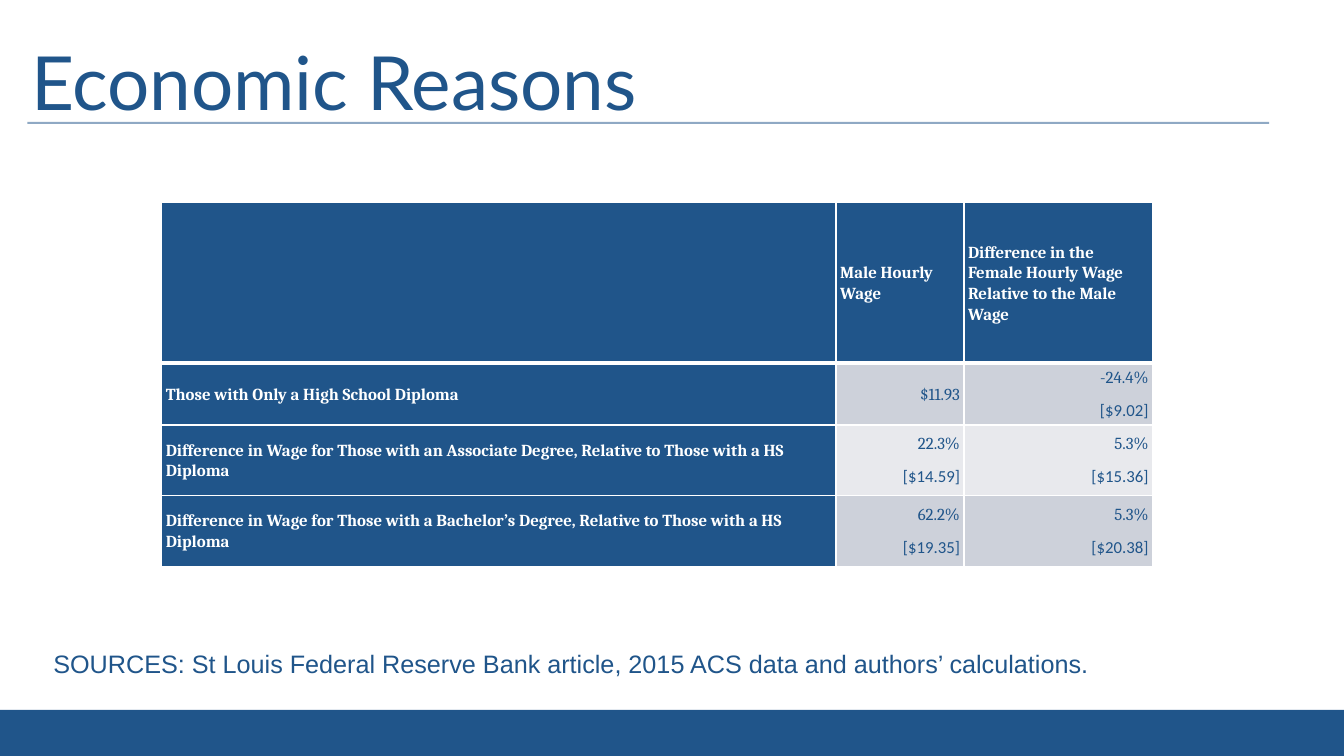
from pptx import Presentation
from pptx.dml.color import RGBColor
from pptx.enum.shapes import MSO_CONNECTOR, MSO_SHAPE
from pptx.enum.text import MSO_ANCHOR, MSO_AUTO_SIZE, PP_ALIGN
from pptx.oxml.ns import qn
from pptx.util import Pt
from lxml.etree import SubElement

BLUE = RGBColor(0x20, 0x55, 0x8A)
WHITE = RGBColor(0xFF, 0xFF, 0xFF)
DARK = RGBColor(0xCD, 0xD1, 0xDA)
LIGHT = RGBColor(0xE8, 0xE9, 0xED)

COLS = [481.7, 91.4, 134.7]
ROWS = [114.5, 43.9, 50.4, 50.4]
WAGES = [
    ["", "Male Hourly Wage",
     "Difference in the Female Hourly Wage Relative to the Male Wage"],
    ["Those with Only a High School Diploma", "$11.93", "-24.4%\n[$9.02]"],
    ["Difference in Wage for Those with an Associate Degree, "
     "Relative to Those with a HS Diploma", "22.3%\n[$14.59]", "5.3%\n[$15.36]"],
    ["Difference in Wage for Those with a Bachelor’s Degree, "
     "Relative to Those with a HS Diploma", "62.2%\n[$19.35]", "5.3%\n[$20.38]"],
]


def style(para, name, size, color, bold=False):
    font = para.font
    font.name, font.size, font.bold = name, Pt(size), bold
    font.color.rgb = color


def add_title(slide, text):
    title = slide.shapes.title
    title.left, title.top, title.width, title.height = Pt(15), Pt(22.3), Pt(870.5), Pt(64)
    frame = title.text_frame
    frame.text = text
    frame.auto_size = MSO_AUTO_SIZE.NONE
    frame.vertical_anchor = MSO_ANCHOR.TOP
    para = frame.paragraphs[0]
    para.alignment = PP_ALIGN.LEFT
    style(para, "Lato", 53.3, BLUE)


def add_bar(slide):
    bar = slide.shapes.add_shape(MSO_SHAPE.RECTANGLE, Pt(0), Pt(507), Pt(960), Pt(33))
    bar.shadow.inherit = False
    bar.fill.solid()
    bar.fill.fore_color.rgb = BLUE
    bar.line.fill.background()


def add_rule(slide):
    rule = slide.shapes.add_connector(
        MSO_CONNECTOR.STRAIGHT, Pt(19.6), Pt(87.8), Pt(906.5), Pt(87.8))
    rule.line.color.rgb = BLUE
    rule.line.width = Pt(1.5)
    props = rule._element.spPr
    tint = props.find(".//" + qn("a:srgbClr"))
    SubElement(tint, qn("a:alpha"), val="50000")
    SubElement(props, qn("a:effectLst"))


def add_edges(cell, top, base):
    props = cell._tc.get_or_add_tcPr()
    for side, width in zip("LRTB", (1, 1, top, base)):
        line = SubElement(props, qn("a:ln" + side), w=str(Pt(width)))
        fill = SubElement(line, qn("a:solidFill"))
        SubElement(fill, qn("a:srgbClr"), val=str(WHITE))


def fill_cell(cell, text, row, col):
    head = row == 0 or col == 0
    add_edges(cell, 3 if row == 1 else 1, 3 if row == 0 else 1)
    cell.fill.solid()
    cell.fill.fore_color.rgb = BLUE if head else DARK if row % 2 else LIGHT
    cell.vertical_anchor = MSO_ANCHOR.MIDDLE
    cell.margin_left = cell.margin_right = Pt(2.9)
    cell.margin_top = cell.margin_bottom = Pt(2.9)
    cell.text = text
    for para in cell.text_frame.paragraphs:
        para.alignment = PP_ALIGN.LEFT if head else PP_ALIGN.RIGHT
        para.line_spacing = 1.07
        para.space_after = Pt(8)
        name = "Calibri" if para.text.startswith("[") else "Cambria"
        style(para, name, 12, WHITE if head else BLUE, head)


def add_wages(slide):
    table = slide.shapes.add_table(
        len(ROWS), len(COLS), Pt(115.5), Pt(144.9), Pt(sum(COLS)), Pt(sum(ROWS))).table
    table.first_col = True
    for col, width in zip(table.columns, COLS):
        col.width = Pt(width)
    for row, height in zip(table.rows, ROWS):
        row.height = Pt(height)
    for row, texts in enumerate(WAGES):
        for col, text in enumerate(texts):
            fill_cell(table.cell(row, col), text, row, col)


def add_note(slide, text):
    frame = slide.shapes.add_textbox(Pt(31), Pt(459.4), Pt(759.6), Pt(51)).text_frame
    frame.word_wrap = True
    frame.text = text
    style(frame.paragraphs[0], "Arial", 18, BLUE)


def main():
    """Build the wage slide and save it."""
    deck = Presentation()
    deck.slide_width, deck.slide_height = Pt(960), Pt(540)
    slide = deck.slides.add_slide(deck.slide_layouts[5])
    add_bar(slide)
    add_rule(slide)
    add_wages(slide)
    add_title(slide, "Economic Reasons")
    add_note(slide, "SOURCES: St Louis Federal Reserve Bank article, "
                    "2015 ACS data and authors’ calculations.")
    deck.save("out.pptx")


if __name__ == "__main__":
    main()
